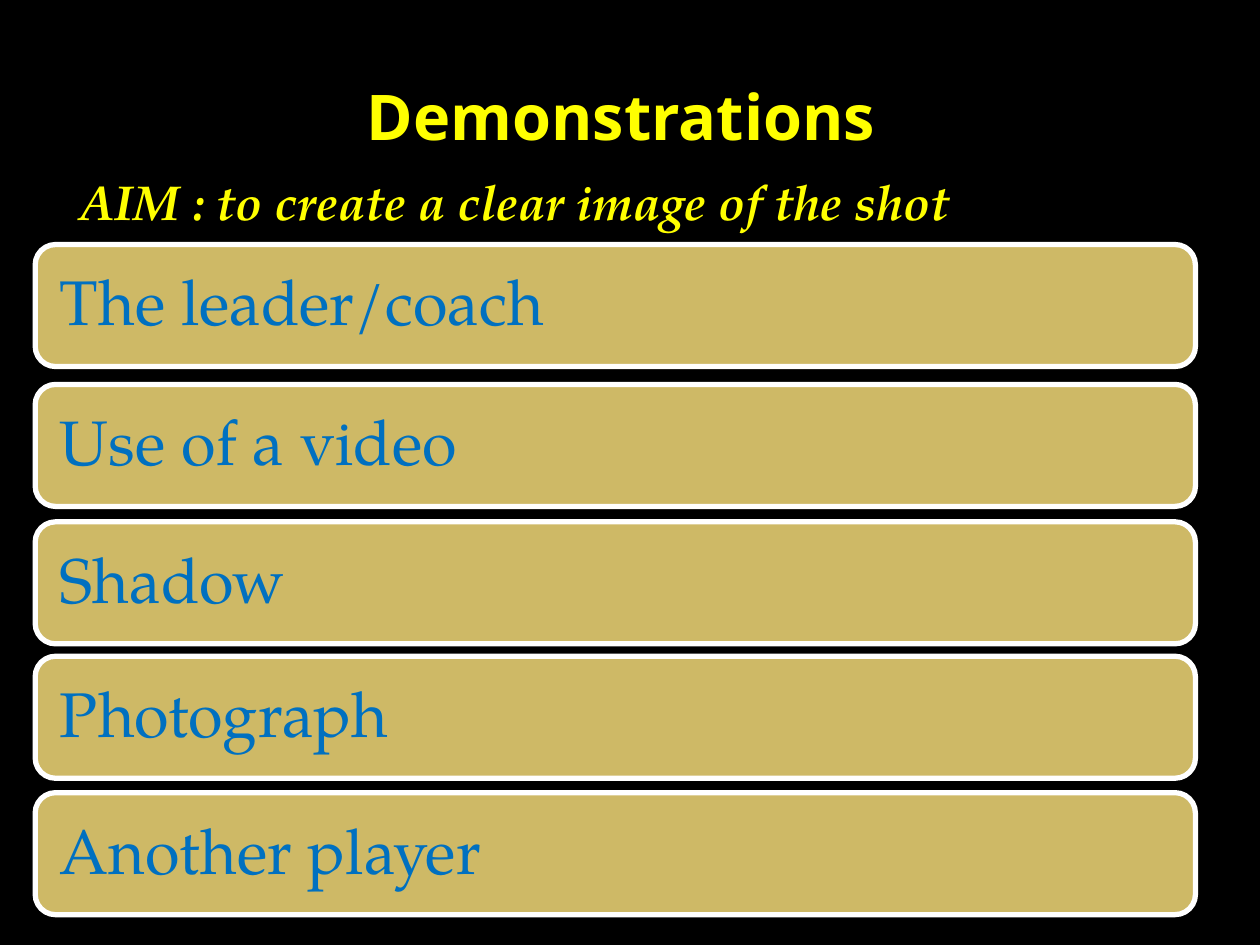
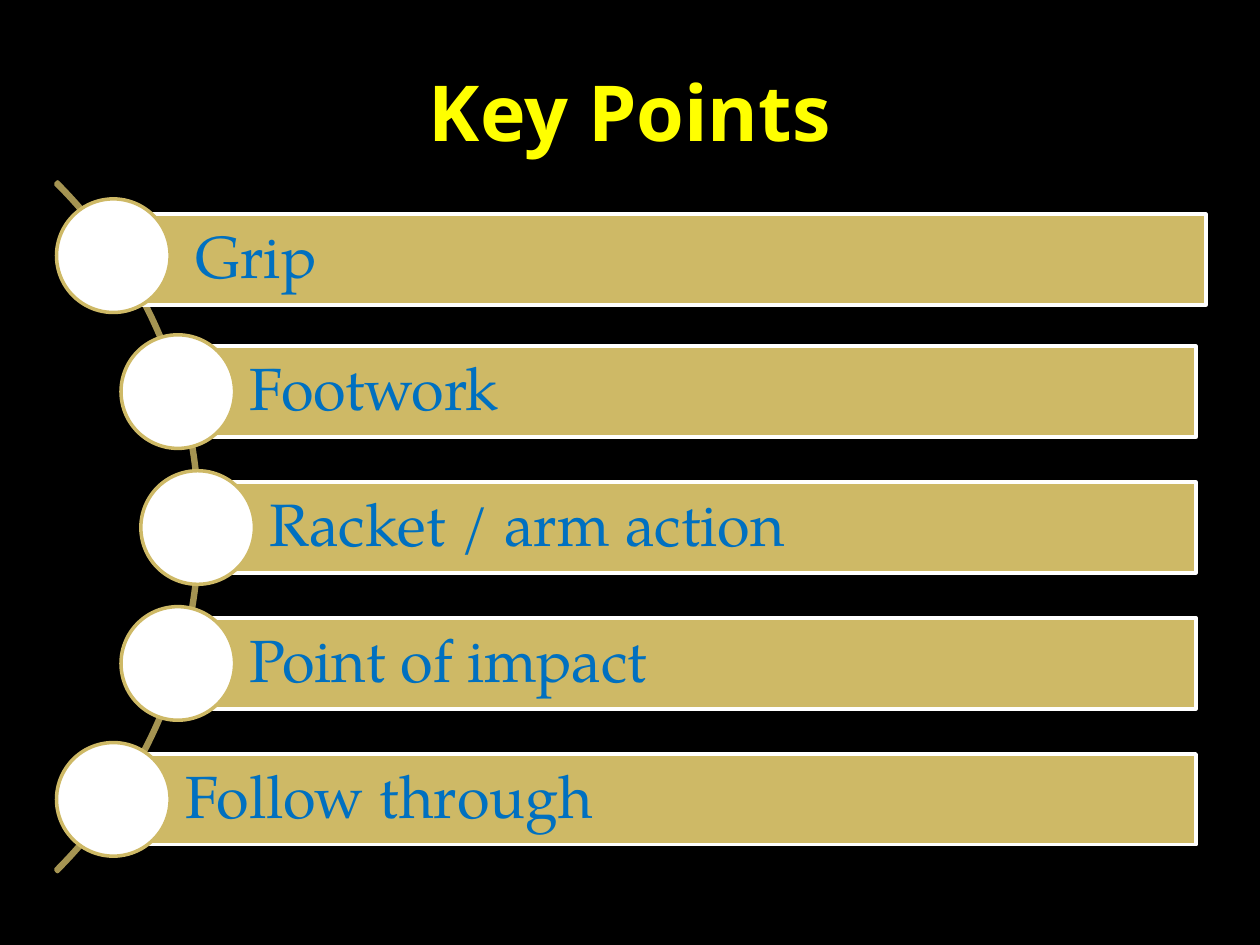
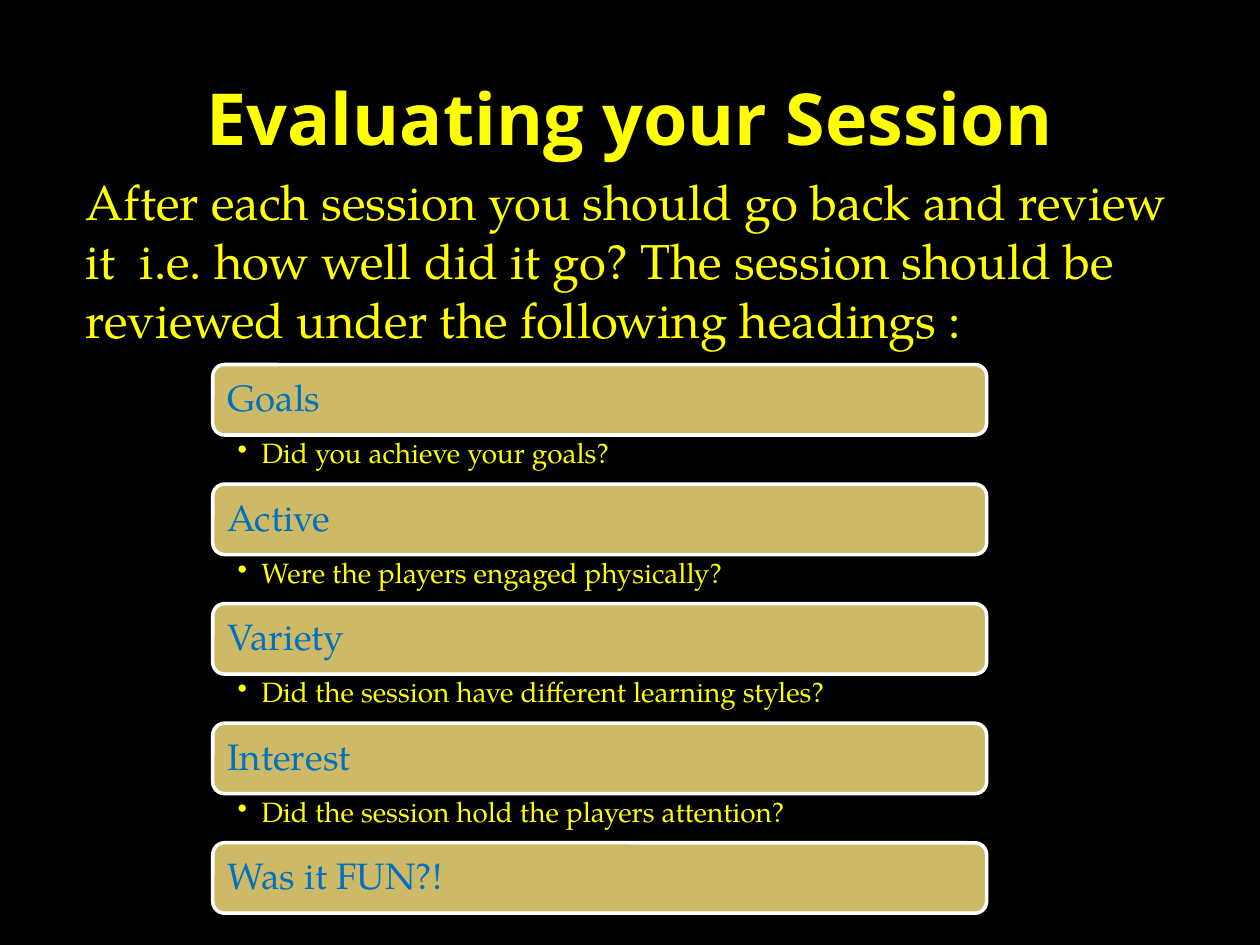
import pptx
import pptx.util
import pptx.dml.color
import pptx.enum.shapes
import pptx.enum.text
import pptx.oxml.ns
from lxml import etree

Cm, Pt = pptx.util.Cm, pptx.util.Pt
PRESET = pptx.enum.shapes.MSO_SHAPE
ANCHOR = pptx.enum.text.MSO_ANCHOR
ALIGN = pptx.enum.text.PP_ALIGN

COLOURS = {
    "background": "000000",
    "heading": "FFFF00",
    "bar": "CEB966",
    "bar_text": "0070C0",
    "outline": "FFFFFF",
    "arc": "A59452",
}
TITLE_FONT = "Open Sans"
BODY_FONT = "TeX Gyre Pagella"
TITLE_ONLY, TITLE_AND_LIST = 5, 1


def colour(name):
    return pptx.dml.color.RGBColor.from_string(COLOURS[name])


class Deck:
    """Holds the shared style and the slide being built."""

    def __init__(self):
        self.presentation = pptx.Presentation()
        self.presentation.slide_width = Cm(25.4)
        self.presentation.slide_height = Cm(19.05)
        self.slide = None

    def new_slide(self, layout):
        layouts = self.presentation.slide_layouts
        self.slide = self.presentation.slides.add_slide(layouts[layout])
        self.slide.background.fill.solid()
        self.slide.background.fill.fore_color.rgb = colour("background")

    def set_text(self, frame, text, size, ink, font=BODY_FONT, bold=False,
                 italic=False, align=ALIGN.LEFT):
        frame.word_wrap = True
        frame.auto_size = pptx.enum.text.MSO_AUTO_SIZE.NONE
        paragraph = frame.paragraphs[0]
        paragraph.text = text
        paragraph.alignment = align
        for run in paragraph.runs:
            run.font.name = font
            run.font.size = Pt(size)
            run.font.bold = bold
            run.font.italic = italic
            run.font.color.rgb = colour(ink)
        return paragraph

    def place(self, item, left, top, width, height):
        item.left, item.top = Cm(left), Cm(top)
        item.width, item.height = Cm(width), Cm(height)

    def title(self, text, size, left=1.27, top=0.76):
        heading = self.slide.shapes.title
        self.place(heading, left, top, 22.86, 3.18)
        heading.text_frame.vertical_anchor = ANCHOR.MIDDLE
        self.set_text(heading.text_frame, text, size, "heading", TITLE_FONT,
                      bold=True, align=ALIGN.CENTER)

    def intro(self, text, left, margin, emphasis=False):
        body = self.slide.placeholders[1]
        self.place(body, left, 3.33, 22.86, 13.08)
        paragraph = self.set_text(body.text_frame, text, 28, "heading",
                                  bold=emphasis, italic=emphasis)
        self.indent(paragraph, margin, 0)
        etree.SubElement(paragraph._p.pPr, pptx.oxml.ns.qn("a:buNone"))

    def indent(self, paragraph, margin, first_line):
        properties = paragraph._p.get_or_add_pPr()
        properties.set("marL", str(Cm(margin)))
        properties.set("indent", str(Cm(first_line)))

    def outlined(self, preset, box, fill, line, weight):
        left, top, width, height = map(Cm, box)
        outline = self.slide.shapes.add_shape(preset, left, top, width, height)
        outline.shadow.inherit = False
        if fill:
            outline.fill.solid()
            outline.fill.fore_color.rgb = colour(fill)
        else:
            outline.fill.background()
        outline.line.color.rgb = colour(line)
        outline.line.width = Pt(weight)
        return outline

    def bar(self, text, box, size, preset=PRESET.ROUNDED_RECTANGLE, weight=2,
            inset=0.23, left_inset=None):
        frame = self.outlined(preset, box, "bar", "outline", weight).text_frame
        frame.margin_left = Cm(left_inset or inset)
        frame.margin_right = frame.margin_top = frame.margin_bottom = Cm(inset)
        frame.vertical_anchor = ANCHOR.MIDDLE
        self.set_text(frame, text, size, "bar_text").line_spacing = 0.9

    def bullet(self, text, left, top, width, height):
        frame = self.slide.shapes.add_textbox(
            Cm(left), Cm(top), Cm(width), Cm(height)).text_frame
        frame.margin_left, frame.margin_right = Cm(0.5), Cm(0.4)
        frame.margin_top = frame.margin_bottom = Cm(0.07)
        paragraph = self.set_text(frame, text, 16, "heading")
        paragraph.line_spacing = 0.9
        self.indent(paragraph, 0.48, -0.48)
        mark = etree.SubElement(paragraph._p.pPr, pptx.oxml.ns.qn("a:buChar"))
        mark.set("char", "•")


def demonstrations(deck):
    deck.new_slide(TITLE_AND_LIST)
    deck.title("Demonstrations", 36, left=1.09, top=0.74)
    deck.intro("AIM : to create a clear image of the shot", 0.71, 0.64,
               emphasis=True)
    methods = {
        "The leader/coach": 4.93,
        "Use of a video": 7.75,
        "Shadow": 10.52,
        "Photograph": 13.23,
        "Another player": 15.98,
    }
    for method, top in methods.items():
        deck.bar(method, (0.71, top, 23.39, 2.46), 36, weight=3, inset=0.38)


def key_points(deck):
    deck.new_slide(TITLE_ONLY)
    deck.title("Key Points", 44.1, top=0.64)
    arc = deck.outlined(PRESET.BLOCK_ARC, (-15.62, 0.79, 19.66, 19.66),
                        None, "arc", 2)
    for index, value in enumerate((189, 27, 0.003)):
        arc.adjustments[index] = value

    dot, pitch, bar_right = 2.29, 2.74, 24.11
    # Each point: dot's left edge, then the bar's shift right and down
    points = [
        ("Grip", 1.14, 0.2, 0.08),
        ("Footwork", 2.44, 0, 0),
        ("Racket / arm action", 2.84, 0, 0),
        ("Point of impact", 2.44, 0, 0),
        ("Follow through", 1.14, 0, 0),
    ]
    for row, (point, dot_left, right, down) in enumerate(points):
        dot_top = 4.01 + row * pitch
        bar_left = dot_left + dot / 2
        deck.bar(point, (bar_left + right, dot_top + 0.23 + down,
                         bar_right - bar_left, 1.83),
                 34, PRESET.RECTANGLE, left_inset=1.45)
        deck.outlined(PRESET.OVAL, (dot_left, dot_top, dot, dot),
                      "outline", "bar", 2)


def evaluating(deck):
    deck.new_slide(TITLE_AND_LIST)
    deck.title("Evaluating your Session", 41)
    deck.intro("After each session you should go back and review it  i.e. how "
               "well did it go? The session should be reviewed under the "
               "following headings :", 1.09, 0.38)
    left, width = 4.29, 15.6
    headings = [
        ("Goals", "Did you achieve your goals?"),
        ("Active", "Were the players engaged physically?"),
        ("Variety", "Did the session have different learning styles?"),
        ("Interest", "Did the session hold the players attention?"),
        ("Was it FUN?!", None),
    ]
    for row, (heading, question) in enumerate(headings):
        top = 7.35 + row * 2.41
        deck.bar(heading, (left, top, width, 1.42), 21)
        if question:
            deck.bullet(question, left, top + 1.44, width, 0.97)


def main():
    deck = Deck()
    demonstrations(deck)
    key_points(deck)
    evaluating(deck)
    deck.presentation.save("out.pptx")


if __name__ == "__main__":
    main()
